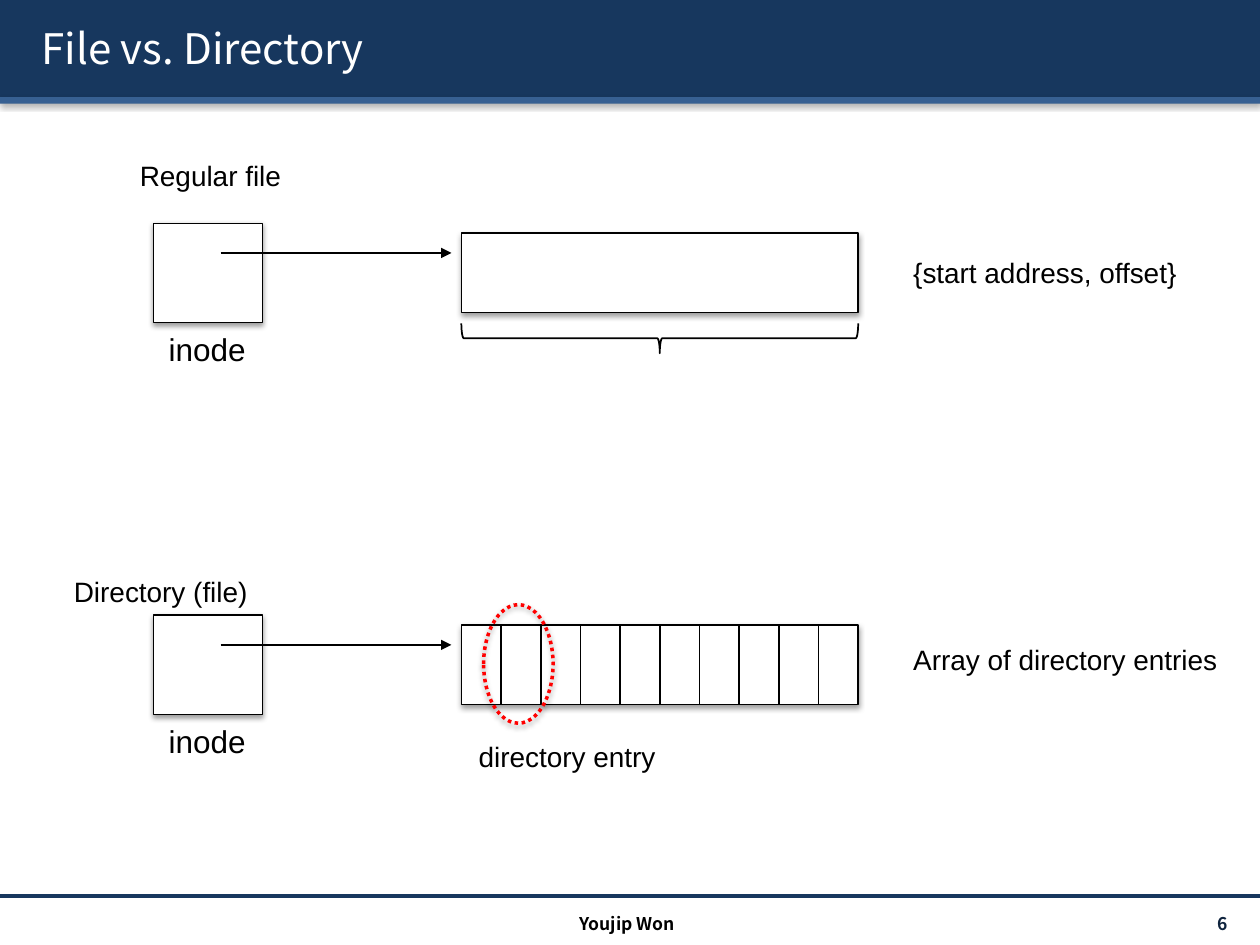
from dataclasses import dataclass
from typing import Optional

from lxml import etree
from pptx import Presentation
from pptx import util as u
from pptx.dml.color import RGBColor
from pptx.enum import dml, shapes, text
from pptx.oxml.ns import qn

NAVY = RGBColor(0x17, 0x37, 0x5E)
BLUE = RGBColor(0x37, 0x60, 0x92)
INK = RGBColor(0x0F, 0x24, 0x3E)
BLACK = RGBColor(0, 0, 0)
WHITE = RGBColor(0xFF, 0xFF, 0xFF)
RED = RGBColor(0xFF, 0, 0)
BODY_FONT = "Arial"
DECK_FONT = "Noto Sans CJK KR"
CONTENT_LEFT, CONTENT_WIDTH, CONTENT_HEIGHT = 9.3, 8.0, 1.6
ENTRY_COUNT = 10


@dataclass(frozen=True)
class Box:
    left: float
    top: float
    width: float
    height: float

    def lengths(self) -> tuple:
        return tuple(u.Cm(v) for v in (self.left, self.top, self.width, self.height))


@dataclass(frozen=True)
class Label:
    words: str
    box: Box
    size: int = 16
    font: str = BODY_FONT
    color: RGBColor = BLACK
    bold: bool = False
    align: text.PP_ALIGN = text.PP_ALIGN.LEFT
    anchor: text.MSO_ANCHOR = text.MSO_ANCHOR.TOP


def add_shadow(effects, blur: float, distance: float, angle: int, alpha: int) -> None:
    shadow = etree.SubElement(
        effects, qn("a:outerShdw"), blurRad=str(u.Pt(blur)), dist=str(u.Pt(distance)),
        dir=str(angle * 60000), algn="ctr", rotWithShape="0")
    color = etree.SubElement(shadow, qn("a:srgbClr"), val=str(BLACK))
    etree.SubElement(color, qn("a:alpha"), val=str(alpha * 1000))


def draw_shape(slide, kind: shapes.MSO_SHAPE, box: Box, fill: Optional[RGBColor] = None,
               line: Optional[RGBColor] = None, weight: float = 0.75, shadowed: bool = True):
    shape = slide.shapes.add_shape(kind, *box.lengths())
    if fill is None:
        shape.fill.background()
    else:
        shape.fill.solid()
        shape.fill.fore_color.rgb = fill
    if line is None:
        shape.line.fill.background()
    else:
        shape.line.color.rgb = line
        shape.line.width = u.Pt(weight)
    shape.shadow.inherit = False
    if shadowed:
        effects = shape.element.spPr.find(qn("a:effectLst"))
        add_shadow(effects, 3.1, 1.6, 90, 38)
    return shape


def draw_line(slide, x1: float, y1: float, x2: float, y2: float,
              color: RGBColor = BLACK, weight: float = 1, arrow: bool = False) -> None:
    line = slide.shapes.add_connector(
        shapes.MSO_CONNECTOR.STRAIGHT, u.Cm(x1), u.Cm(y1), u.Cm(x2), u.Cm(y2))
    line.line.color.rgb = color
    line.line.width = u.Pt(weight)
    if arrow:
        etree.SubElement(line.line._get_or_add_ln(), qn("a:tailEnd"), type="triangle")
    etree.SubElement(line.element.spPr, qn("a:effectLst"))


def write_label(holder, label: Label):
    frame = holder.text_frame
    frame.word_wrap = True
    frame.auto_size = text.MSO_AUTO_SIZE.NONE
    frame.vertical_anchor = label.anchor
    paragraph = frame.paragraphs[0]
    paragraph.alignment = label.align
    run = paragraph.add_run()
    run.text = label.words
    run.font.size = u.Pt(label.size)
    run.font.bold = label.bold
    run.font.color.rgb = label.color
    run.font.name = label.font
    return run


def draw_label(slide, label: Label):
    holder = slide.shapes.add_textbox(*label.box.lengths())
    write_label(holder, label)
    return holder


def draw_frame(slide) -> None:
    draw_shape(slide, shapes.MSO_SHAPE.RECTANGLE, Box(0, 0, 25.4, 1.96), NAVY)
    draw_shape(slide, shapes.MSO_SHAPE.RECTANGLE, Box(0, 1.96, 25.4, 0.13), BLUE)
    draw_line(slide, 0, 18.06, 25.4, 18.06, NAVY, 2)

    title = slide.shapes.title
    heading = Label("File vs. Directory", Box(0.58, 0.15, 24.41, 1.63), 24, DECK_FONT,
                    WHITE, anchor=text.MSO_ANCHOR.MIDDLE)
    title.left, title.top, title.width, title.height = heading.box.lengths()
    run = write_label(title, heading)
    effects = etree.Element(qn("a:effectLst"))
    add_shadow(effects, 0, 1.5, 45, 100)
    run.font._element.find(qn("a:solidFill")).addnext(effects)
    title.element.getparent().append(title.element)

    number = draw_label(slide, Label("6", Box(22.12, 18.31, 2.97, 0.61), 10, DECK_FONT, INK,
                                     True, text.PP_ALIGN.RIGHT, text.MSO_ANCHOR.MIDDLE))
    number.text_frame.margin_right = u.Cm(0.34)
    draw_label(slide, Label("Youjip Won", Box(8.43, 18.29, 8.43, 0.61), 10, DECK_FONT,
                            bold=True, align=text.PP_ALIGN.CENTER))


def draw_file(slide, top: float, captions: list[Label]) -> None:
    content = Box(CONTENT_LEFT, top + 0.2, CONTENT_WIDTH, CONTENT_HEIGHT)
    for box in (content, Box(3.1, top, 2.2, 2)):
        draw_shape(slide, shapes.MSO_SHAPE.RECTANGLE, box, WHITE, BLACK)
    draw_label(slide, Label("inode", Box(3.15, top + 2.03, 2.59, 1.02), 18))
    draw_line(slide, 4.45, top + 0.6, 9.1, top + 0.6, arrow=True)
    for caption in captions:
        draw_label(slide, caption)


def draw_entries(slide, top: float) -> None:
    step = CONTENT_WIDTH / ENTRY_COUNT
    for index in range(1, ENTRY_COUNT):
        x = CONTENT_LEFT + index * step
        draw_line(slide, x, top, x, top + CONTENT_HEIGHT)
    highlight = draw_shape(slide, shapes.MSO_SHAPE.OVAL, Box(9.75, 12.19, 1.4, 2.39),
                           line=RED, weight=2)
    highlight.line.dash_style = dml.MSO_LINE.ROUND_DOT


def main() -> None:
    deck = Presentation()
    deck.slide_width, deck.slide_height = u.Cm(25.4), u.Cm(19.05)
    slide = deck.slides.add_slide(deck.slide_layouts[5])
    draw_frame(slide)

    regular_top, directory_top = 4.5, 12.4
    draw_file(slide, regular_top, [
        Label("Regular file", Box(2.57, 3.07, 4.2, 0.94)),
        Label("{start address, offset}", Box(18.16, 5.03, 6.3, 0.94)),
    ])
    extent = draw_shape(slide, shapes.MSO_SHAPE.RIGHT_BRACE, Box(13, 2.82, 0.6, CONTENT_WIDTH),
                        line=BLACK, weight=1, shadowed=False)
    extent.rotation = 90

    draw_file(slide, directory_top, [
        Label("Directory (file)", Box(1.24, 11.46, 5.87, 0.94)),
        Label("directory entry", Box(9.4, 14.78, 5, 0.94)),
        Label("Array of directory entries", Box(18.16, 12.83, 6.86, 0.94)),
    ])
    draw_entries(slide, directory_top + 0.2)
    deck.save("out.pptx")


if __name__ == "__main__":
    main()
